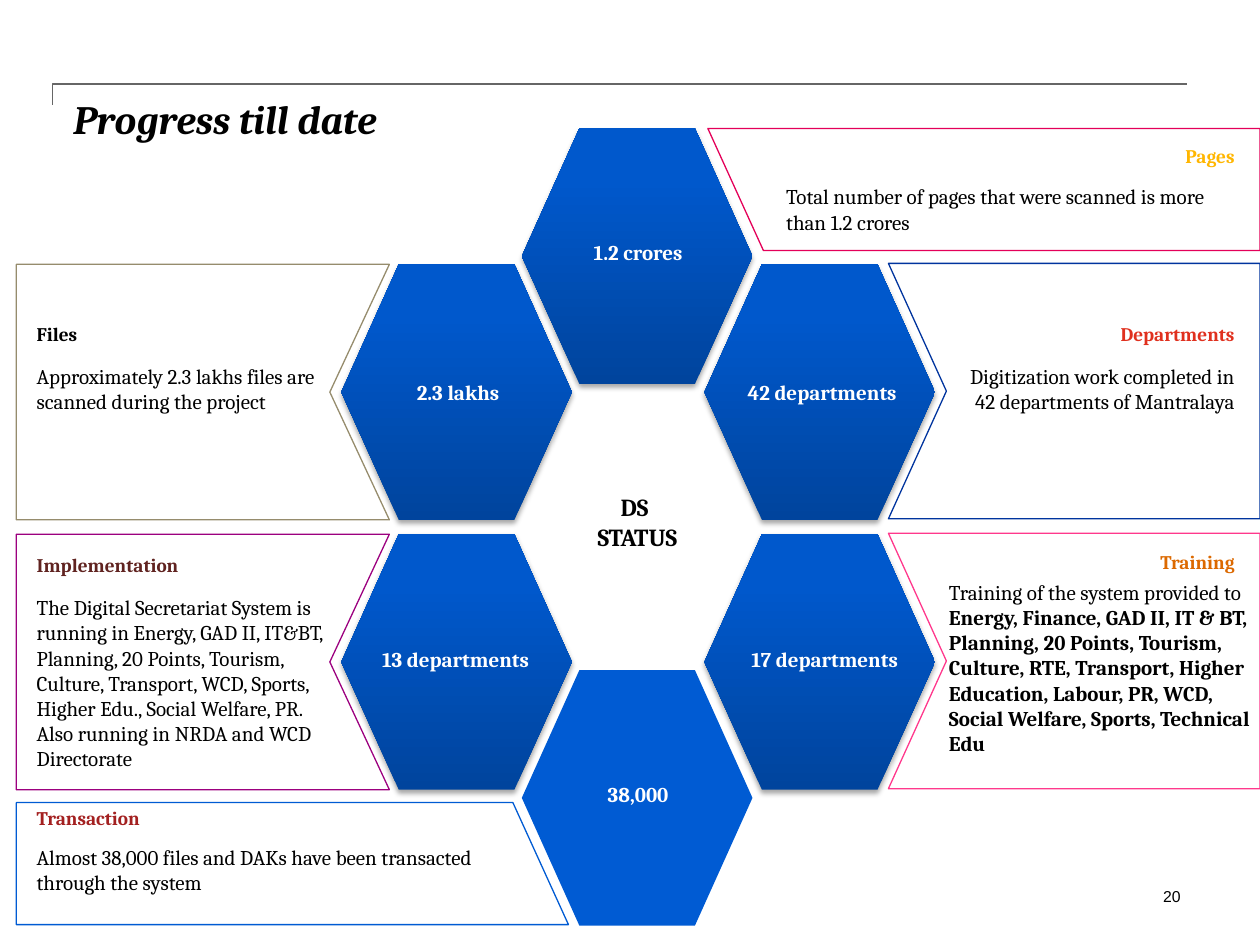
from copy import deepcopy

from lxml.etree import SubElement
from pptx import Presentation
from pptx.dml.color import RGBColor
from pptx.enum.text import MSO_ANCHOR, PP_ALIGN
from pptx.oxml.ns import qn
from pptx.util import Cm, Pt

LEFT, CENTER, RIGHT = PP_ALIGN.LEFT, PP_ALIGN.CENTER, PP_ALIGN.RIGHT
SLIDE_WIDTH, SLIDE_HEIGHT = 25.4, 19.05
HEXAGON_WIDTH, HEXAGON_HEIGHT, HEXAGON_CORNER = 4.65, 5.15, 1.16
PANEL_LEFT = 0.33

TITLE = {"size": Pt(23), "bold": True, "italic": True, "name": "Cambria"}
HEADING = {"size": Pt(11), "bold": True, "name": "Cambria"}
BODY = {"size": Pt(12), "bold": False, "name": "Cambria"}
STRONG = {**BODY, "bold": True}
HUB = {"size": Pt(14), "bold": True, "name": "Cambria"}
PAGE_NUMBER = {"size": Pt(9), "name": "Arial"}


def rgb(hex_color):
    return RGBColor.from_string(hex_color)


class StatusSlide:
    """Holds the slide and the style shared by its elements."""

    text_color = "000000"
    label_color = "FFFFFF"
    flat_blue = "005BD3"
    gradient = [(0, "00449D"), (0.8, "0058CC"), (1, "0059CD")]

    def __init__(self, slide):
        self.slide = slide

    def outline(self, points, color=None, width=0.75, close=True):
        points = [(Cm(x), Cm(y)) for x, y in points]
        builder = self.slide.shapes.build_freeform(*points[0])
        builder.add_line_segments(points[1:], close=close)
        shape = builder.convert_to_shape()
        shape.shadow.inherit = False
        shape.fill.background()
        if color:
            shape.line.color.rgb = rgb(color)
            shape.line.width = Pt(width)
        else:
            shape.line.fill.background()
        return shape

    def panel(self, outer, inner_edge, top, height, color):
        """Box whose inner edge runs through evenly spaced points."""
        step = height / (len(inner_edge) - 1)
        edge = [(x, top + step * i) for i, x in enumerate(inner_edge)]
        self.outline([(outer, top), *edge, (outer, top + height)], color)

    def hexagon(self, left, top, shaded=True):
        right, bottom = left + HEXAGON_WIDTH, top + HEXAGON_HEIGHT
        middle = top + HEXAGON_HEIGHT / 2
        inner_left, inner_right = left + HEXAGON_CORNER, right - HEXAGON_CORNER
        shape = self.outline([
            (inner_right, top), (inner_left, top), (left, middle),
            (inner_left, bottom), (inner_right, bottom), (right, middle)])
        if shaded:
            self.shade(shape)
        else:
            shape.fill.solid()
            shape.fill.fore_color.rgb = rgb(self.flat_blue)

    def shade(self, shape):
        fill = shape.fill
        fill.gradient()
        fill.gradient_angle = 90
        properties = shape._element.spPr
        stop_list = properties.find(".//" + qn("a:gsLst"))
        stop_list.append(deepcopy(stop_list[-1]))
        for stop, (position, color) in zip(fill.gradient_stops, self.gradient):
            stop.position = position
            stop.color.rgb = rgb(color)
        shadow = SubElement(
            properties.find(qn("a:effectLst")), qn("a:outerShdw"),
            blurRad=str(Pt(3.1)), dist=str(Pt(1.8)), dir="5400000", rotWithShape="0")
        shadow_color = SubElement(shadow, qn("a:srgbClr"), val="000000")
        SubElement(shadow_color, qn("a:alpha"), val="35000")

    def text(self, box, paragraphs, align=LEFT, color=None,
             anchor=MSO_ANCHOR.TOP, margins=(0, 0)):
        """Each paragraph is a list of (text, format) runs."""
        shape = self.slide.shapes.add_textbox(*map(Cm, box))
        frame = shape.text_frame
        horizontal, vertical = map(Cm, margins)
        frame_format = {
            "word_wrap": True, "vertical_anchor": anchor,
            "margin_left": horizontal, "margin_right": horizontal,
            "margin_top": vertical, "margin_bottom": vertical}
        for name, value in frame_format.items():
            setattr(frame, name, value)
        for index, runs in enumerate(paragraphs):
            paragraph = frame.add_paragraph() if index else frame.paragraphs[0]
            paragraph.alignment = align
            for content, text_format in runs:
                run = paragraph.add_run()
                run.text = content
                for name, value in text_format.items():
                    setattr(run.font, name, value)
                run.font.color.rgb = rgb(color or self.text_color)


def main():
    presentation = Presentation()
    presentation.slide_width, presentation.slide_height = Cm(SLIDE_WIDTH), Cm(SLIDE_HEIGHT)
    page = StatusSlide(presentation.slides.add_slide(presentation.slide_layouts[6]))

    # Header rule, title and page number
    page.outline([(1.06, 2.11), (1.06, 1.69), (23.92, 1.69)], "666666", 1, close=False)
    page.text((1.48, 1.9, 22.43, 2.54), [[("Progress till date", TITLE)]])
    page.text((19.81, 17.75, 4.24, 0.38), [[("20", PAGE_NUMBER)]],
              align=RIGHT, margins=(0.25, 0.13))

    # Outlined panels: outer side, inner edge, top, height, line colour
    right_notch = (17.91, 19.08, 17.91)
    left_notch = (7.85, 6.65, 7.85)
    for panel in [
        (SLIDE_WIDTH, (14.27, 15.39), 2.59, 2.46, "E40059"),
        (SLIDE_WIDTH, right_notch, 10.75, HEXAGON_HEIGHT, "FF388C"),
        (SLIDE_WIDTH, right_notch, 5.31, HEXAGON_HEIGHT, "00349E"),
        (PANEL_LEFT, (10.34, 11.46), 16.18, 2.46, "005BD3"),
        (PANEL_LEFT, left_notch, 5.33, HEXAGON_HEIGHT, "968C6D"),
        (PANEL_LEFT, left_notch, 10.77, HEXAGON_HEIGHT, "9C007F"),
    ]:
        page.panel(*panel)

    # Ring of hexagons: left, top, label, label offset
    hexagons = [
        (10.52, 2.59, "1.2 crores", 0.02, 2.24),
        (14.2, 5.33, "42 departments", 0.05, 2.32),
        (6.88, 5.33, "2.3 lakhs", 0.03, 2.32),
        (14.2, 10.77, "17 departments", 0.1, 2.26),
        (6.88, 10.77, "13 departments", -0.02, 2.26),
        (10.52, 13.51, "38,000", 0.02, 2.24),
    ]
    for left, top, label, _, _ in hexagons:
        page.hexagon(left, top, shaded=label != "38,000")
    for left, top, label, shift, drop in hexagons:
        page.text((left + shift, top + drop, HEXAGON_WIDTH, 0.51),
                  [[(label, STRONG)]], CENTER, page.label_color)
    page.text((10.36, 8.89, 4.98, 3.25), [[("DS ", HUB)], [("STATUS", HUB)]],
              CENTER, anchor=MSO_ANCHOR.MIDDLE)

    # Panel headings: text, box, alignment, colour
    for heading, box, align, color in [
        ("Files", (0.74, 6.5, 5.08, 1.04), LEFT, "000000"),
        ("Implementation", (0.74, 11.15, 4.17, 1.35), LEFT, "602320"),
        ("Transaction", (0.74, 16.26, 9.83, 1.35), LEFT, "A32020"),
        ("Pages", (20.55, 2.9, 4.34, 1.78), RIGHT, "FFB600"),
        ("Departments", (20.6, 6.5, 4.29, 1.78), RIGHT, "E0301E"),
        ("Training", (18.57, 11.1, 6.32, 1.78), RIGHT, "DC6900"),
    ]:
        page.text(box, [[(heading, HEADING)]], align, color)

    # Panel descriptions: runs, box, alignment
    for runs, box, align in [
        ([("Approximately 2.3 lakhs files are scanned during the project", BODY)],
         (0.74, 7.32, 5.69, 1.24), LEFT),
        ([("The Digital Secretariat System is running in Energy, GAD II, IT&BT, "
           "Planning, 20 Points, Tourism, Culture, Transport, WCD, Sports, "
           "Higher Edu., Social Welfare, PR. Also running in NRDA and WCD "
           "Directorate", BODY)], (0.74, 11.99, 6.12, 2.08), LEFT),
        ([("Almost 38,000 files and DAKs have been transacted through the system", BODY)],
         (0.74, 17.02, 9.83, 1.37), LEFT),
        ([("Total number of pages that were scanned is more than 1.2 crores", BODY)],
         (15.85, 3.71, 9.04, 1.17), LEFT),
        ([("Digitization work completed in 42 departments of Mantralaya", BODY)],
         (19.53, 7.32, 5.36, 2.49), RIGHT),
        ([("Training of the system provided to ", BODY),
          ("Energy, Finance, GAD II, IT & BT, Planning, 20 Points, Tourism, "
           "Culture, RTE, Transport, Higher Education, Labour, PR, WCD, Social "
           "Welfare, Sports, Technical Edu", STRONG)], (19.13, 11.68, 6.12, 3), LEFT),
    ]:
        page.text(box, [runs], align)

    presentation.save("out.pptx")


if __name__ == "__main__":
    main()
